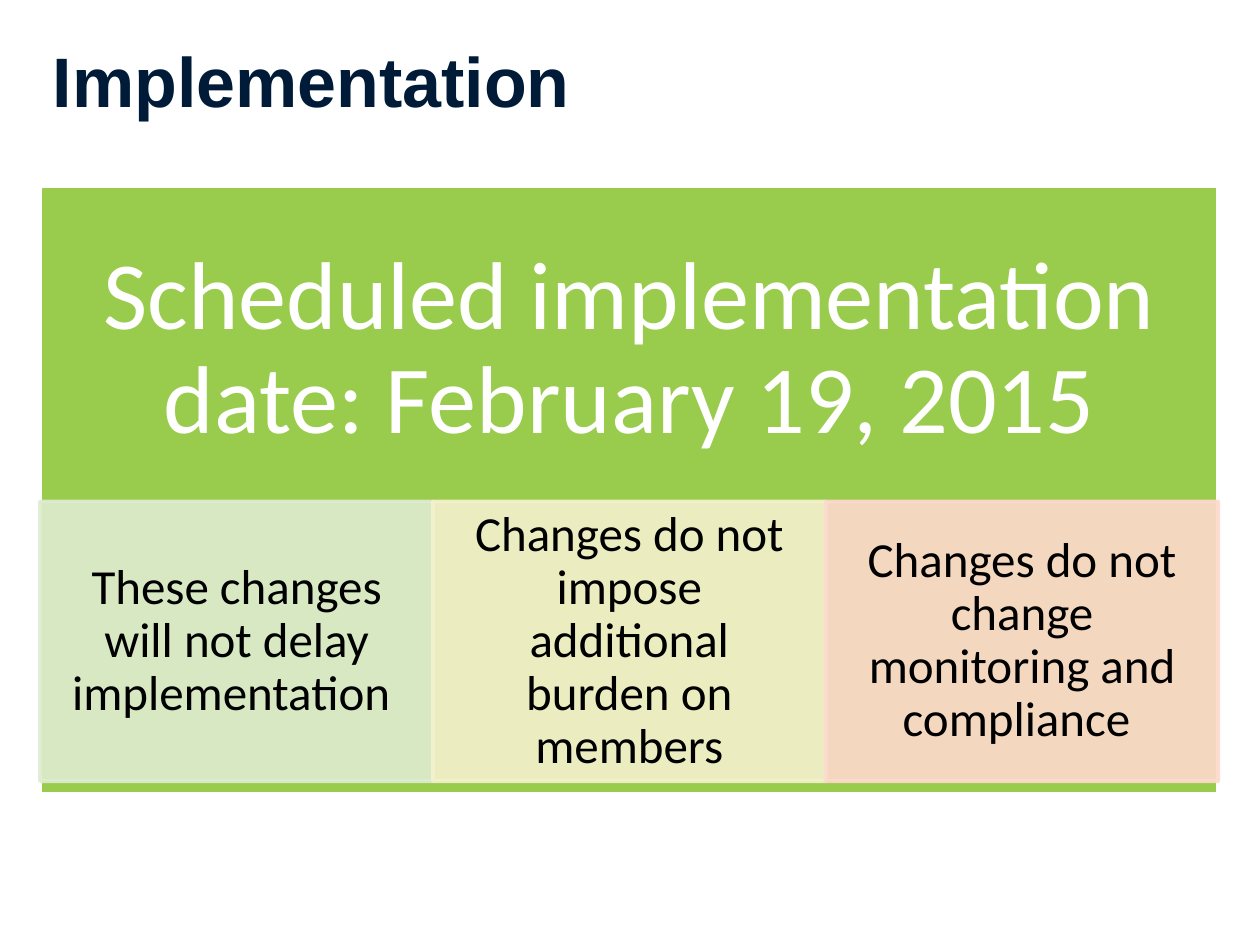
"""Build the implementation slide: a green panel with three cards."""
from pptx import Presentation
from pptx.dml.color import RGBColor
from pptx.enum.shapes import MSO_SHAPE
from pptx.enum.text import MSO_ANCHOR, PP_ALIGN
from pptx.oxml.ns import qn
from pptx.util import Cm, Pt
from lxml.etree import SubElement

NAVY = RGBColor(0x00, 0x1B, 0x37)
GREEN = RGBColor(0x99, 0xCC, 0x4C)
WHITE = RGBColor(0xFF, 0xFF, 0xFF)
BLACK = RGBColor(0x00, 0x00, 0x00)
MINT = RGBColor(0xDE, 0xEC, 0xD0)
CREAM = RGBColor(0xF5, 0xF1, 0xCD)
PEACH = RGBColor(0xFD, 0xDA, 0xCC)

LEFT, WIDTH = 0.81, 23.75
CARDS = [
    ("These changes will not delay implementation ", MINT),
    ("Changes do not impose additional burden on members", CREAM),
    ("Changes do not change monitoring and compliance ", PEACH),
]


def add_box(place, fill, line, text, size, ink, pads):
    box = slide.shapes.add_shape(MSO_SHAPE.RECTANGLE, *map(Cm, place))
    box.shadow.inherit = False
    box.fill.solid()
    box.fill.fore_color.rgb = fill
    box.line.color.rgb = line
    box.line.width = Pt(2.25)
    frame = box.text_frame
    frame.word_wrap = True
    frame.vertical_anchor = MSO_ANCHOR.MIDDLE
    frame.margin_left = frame.margin_right = Cm(pads[0])
    frame.margin_top, frame.margin_bottom = Cm(pads[1]), Cm(pads[2])
    para = frame.paragraphs[0]
    para.text = text
    para.alignment = PP_ALIGN.CENTER
    para.line_spacing = 0.9
    para.font.name = "Calibri"
    para.font.size = Pt(size)
    para.font.color.rgb = ink
    return box


deck = Presentation()
deck.slide_width, deck.slide_height = Cm(25.4), Cm(19.05)
slide = deck.slides.add_slide(deck.slide_layouts[5])

title = slide.shapes.title
title.left, title.top = Cm(LEFT), Cm(0.43)
title.width, title.height = Cm(24.28), Cm(2.36)
title.text_frame.vertical_anchor = MSO_ANCHOR.MIDDLE
head = title.text_frame.paragraphs[0]
head.text = "Implementation"
head.alignment = PP_ALIGN.LEFT
head.font.name = "Arial"
head.font.size = Pt(40)
head.font.bold = True
head.font.color.rgb = NAVY

add_box((LEFT, 3.76, WIDTH, 12.24), GREEN, WHITE,
        "Scheduled implementation date: February 19, 2015",
        55, WHITE, (1.09, 1.09, 6.73))

step = WIDTH / len(CARDS)
for i, (text, tint) in enumerate(CARDS):
    card = add_box((LEFT + i * step, 10.11, step, 5.64), tint, tint,
                   text, 28, BLACK, (0.56, 0.1, 0.1))
    for color in card._element.spPr.iter(qn("a:srgbClr")):
        SubElement(color, qn("a:alpha"), val="90000")

deck.save("out.pptx")
